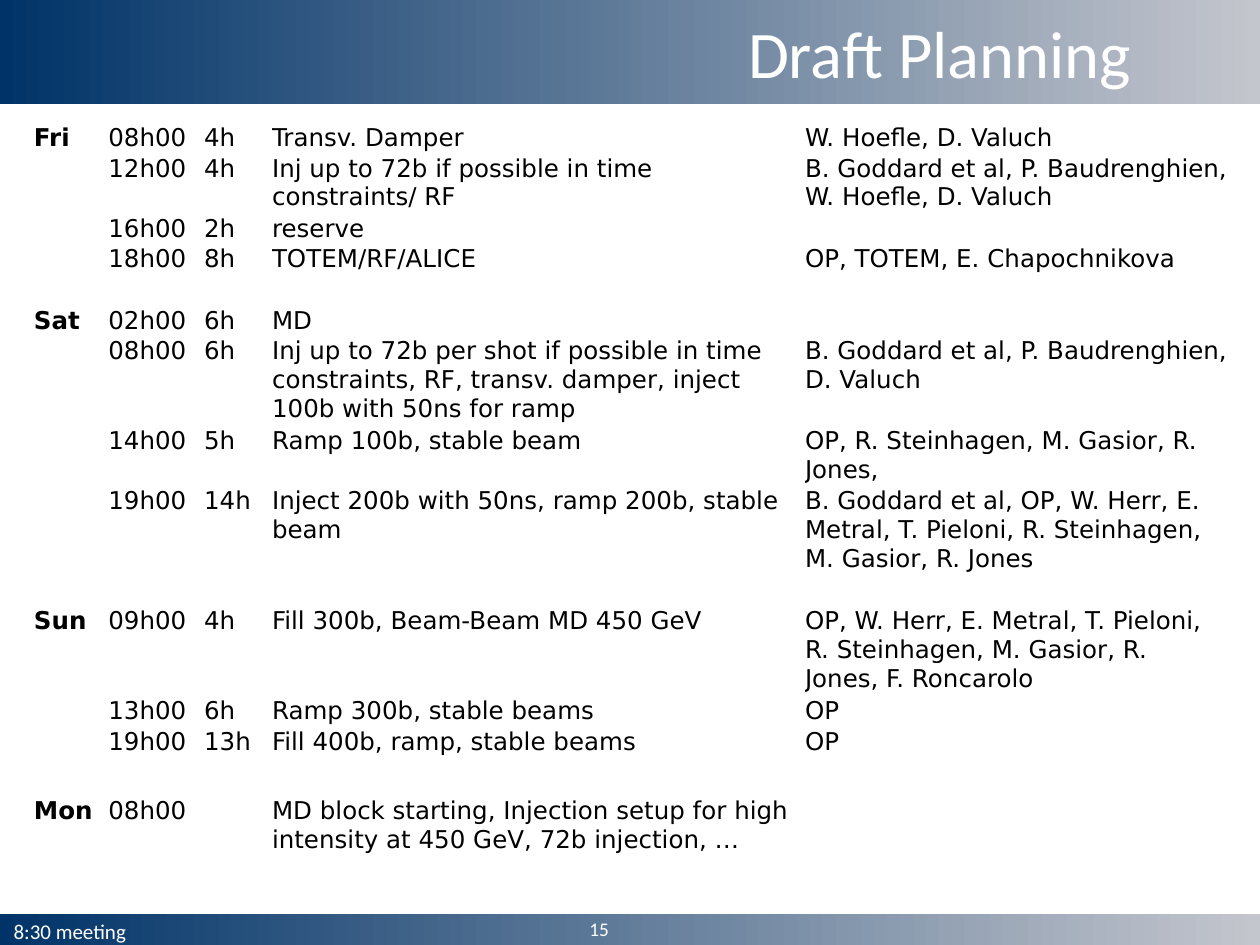
from pptx import Presentation
from pptx.dml.color import RGBColor
from pptx.enum.shapes import MSO_SHAPE as SHAPE
from pptx.enum.text import MSO_ANCHOR as ANCHOR, PP_ALIGN as ALIGN
from pptx.util import Inches, Pt

NAVY, SILVER, WHITE, BLACK = "003368", "C4C6CD", "FFFFFF", "000000"
COL_WIDTHS = [0.59, 0.76, 0.54, 4.23, 3.38]

# Row height, day, start, duration, activity, people
PLAN = [
    (0.15, "Fri", "08h00", "4h", "Transv. Damper", "W. Hoefle, D. Valuch"),
    (0.31, "", "12h00", "4h", "Inj up to 72b if possible in time constraints/ RF",
     "B. Goddard et al, P. Baudrenghien, W. Hoefle, D. Valuch"),
    (0.15, "", "16h00", "2h", "reserve", ""),
    (0.15, "", "18h00", "8h", "TOTEM/RF/ALICE", "OP, TOTEM, E. Chapochnikova"),
    (0.15, "", "", "", "", ""),
    (0.15, "Sat", "02h00", "6h", "MD", ""),
    (0.62, "", "08h00", "6h",
     "Inj up to 72b per shot if possible in time constraints, RF, "
     "transv. damper, inject 100b with 50ns for ramp",
     "B. Goddard et al, P. Baudrenghien, D. Valuch"),
    (0.43, "", "14h00", "5h", "Ramp 100b, stable beam",
     "OP, R. Steinhagen, M. Gasior, R. Jones,"),
    (0.54, "", "19h00", "14h", "Inject 200b with 50ns, ramp 200b, stable beam",
     "B. Goddard et al, OP, W. Herr, E. Metral, T. Pieloni, "
     "R. Steinhagen, M. Gasior, R. Jones"),
    (0.15, "", "", "", "", ""),
    (0.54, "Sun", "09h00", "4h", "Fill 300b, Beam-Beam MD 450 GeV",
     "OP, W. Herr, E. Metral, T. Pieloni, R. Steinhagen, M. Gasior, "
     "R. Jones, F. Roncarolo"),
    (0.15, "", "13h00", "6h", "Ramp 300b, stable beams", "OP"),
    (0.31, "", "19h00", "13h", "Fill 400b, ramp, stable beams", "OP"),
    (0.15, "", "", "", "", ""),
    (0.46, "Mon", "08h00", "",
     "MD block starting, Injection setup for high intensity at 450 GeV, "
     "72b injection, …", ""),
]


def rgb(color):
    return RGBColor.from_string(color)


class SlideBuilder:
    head_font = "Calibri"
    body_font = "DejaVu Sans"

    def __init__(self, slide):
        self.s = slide

    def style(self, font, name, size, color, bold=False):
        font.name, font.size, font.bold = name, Pt(size), bold
        font.color.rgb = rgb(color)

    def bar(self, top, height):
        sp = self.s.shapes.add_shape(SHAPE.RECTANGLE, 0, Inches(top),
                                     Inches(10), Inches(height))
        sp.shadow.inherit = False
        sp.line.fill.background()
        sp.fill.gradient()
        sp.fill.gradient_angle = 0
        for stop, color, pos in zip(sp.fill.gradient_stops, (NAVY, SILVER), (0, 1)):
            stop.color.rgb = rgb(color)
            stop.position = pos
        # Bars lie behind the title
        self.s.shapes._spTree.insert(2, sp._element)

    def put_text(self, sp, text, size, anchor, align):
        tf = sp.text_frame
        tf.text = text
        tf.word_wrap = True
        tf.vertical_anchor = anchor
        p = tf.paragraphs[0]
        p.alignment = align
        self.style(p.runs[0].font, self.head_font, size, WHITE)

    def title(self, text, x, y, w, h):
        sp = self.s.shapes.title
        sp.left, sp.top, sp.width, sp.height = map(Inches, (x, y, w, h))
        self.put_text(sp, text, 38, ANCHOR.MIDDLE, ALIGN.RIGHT)

    def label(self, text, x, y, w, h, size):
        sp = self.s.shapes.add_textbox(*map(Inches, (x, y, w, h)))
        self.put_text(sp, text, size, ANCHOR.BOTTOM, ALIGN.LEFT)

    def table(self, plan, x, y):
        heights = [row[0] for row in plan]
        table = self.s.shapes.add_table(
            len(plan), len(COL_WIDTHS), Inches(x), Inches(y),
            Inches(sum(COL_WIDTHS)), Inches(sum(heights))).table
        table.first_row = table.horz_banding = False
        for col, width in zip(table.columns, COL_WIDTHS):
            col.width = Inches(width)
        for row, (height, *texts) in zip(table.rows, plan):
            row.height = Inches(height)
            for i, (cell, text) in enumerate(zip(row.cells, texts)):
                self.cell(cell, text, bold=i == 0)

    def cell(self, cell, text, bold):
        cell.fill.background()
        cell.margin_left = cell.margin_right = cell.margin_top = Inches(0.01)
        cell.margin_bottom = 0
        p = cell.text_frame.paragraphs[0]
        if text:
            p.text = text
            self.style(p.runs[0].font, self.body_font, 14, BLACK, bold)
        else:
            # Keeps an empty cell as low as a line of text
            end = p._p.get_or_add_endParaRPr()
            end.set("sz", "1400")


def main():
    prs = Presentation()
    prs.slide_width, prs.slide_height = Inches(10), Inches(7.5)
    b = SlideBuilder(prs.slides.add_slide(prs.slide_layouts[5]))

    # Header and footer
    b.bar(0, 0.83)
    b.bar(7.25, 0.25)
    b.title("Draft Planning", 0.83, 0, 8.25, 0.83)
    b.label("8:30 meeting", 0.01, 7.29, 3.97, 0.25, 12)
    b.label("15", 4.58, 7.26, 1.25, 0.25, 11)

    # Schedule
    b.table(PLAN, 0.26, 0.97)
    prs.save("out.pptx")


if __name__ == "__main__":
    main()
